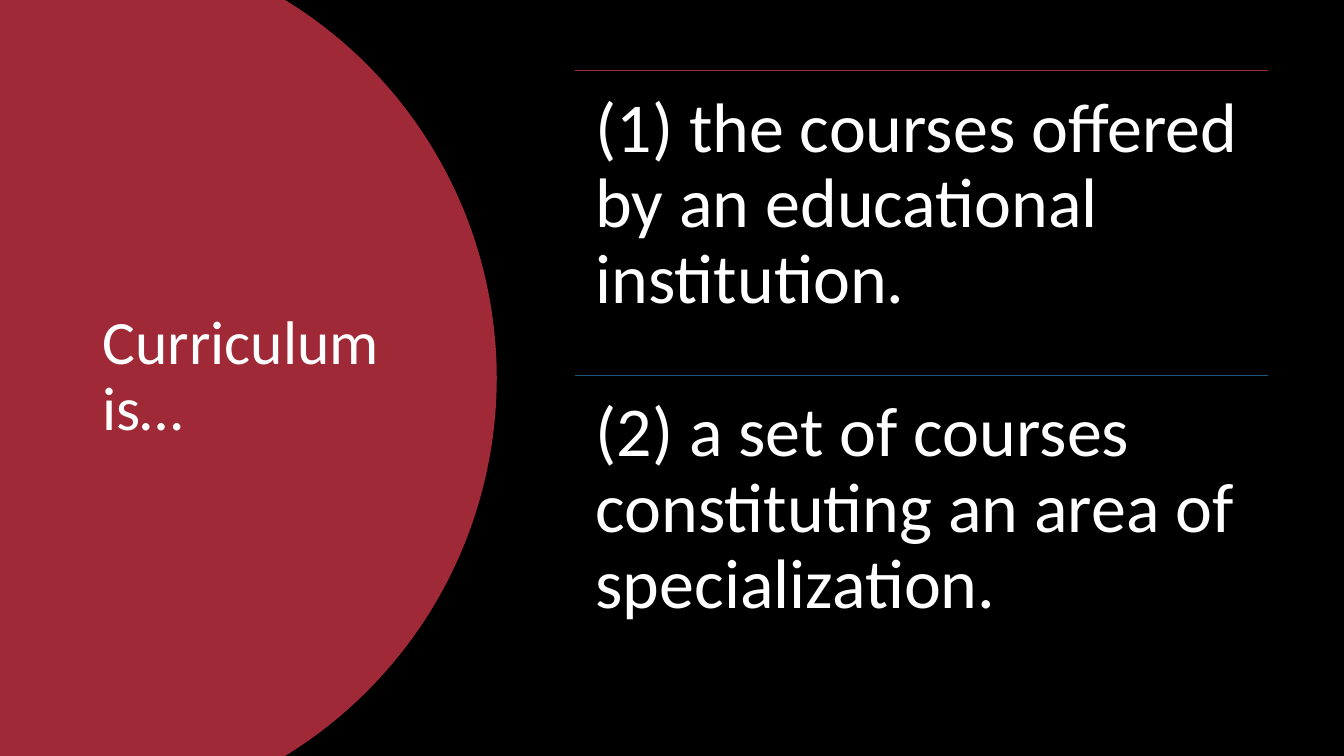
import dataclasses
import math

import pptx
import pptx.dml.color
import pptx.enum.shapes
import pptx.enum.text
import pptx.oxml.ns
import pptx.util
from lxml import etree

Cm = pptx.util.Cm
ANCHOR = pptx.enum.text.MSO_ANCHOR


@dataclasses.dataclass
class Theme:
    background: str = "000000"
    text: str = "FFFFFF"
    red: str = "9F2936"
    blue: str = "1B587C"
    font: str = "Calibri"
    title_size: float = 44
    body_size: float = 50
    rule_width: float = 1
    line_spacing: float = 0.9


def rgb(value):
    return pptx.dml.color.RGBColor.from_string(value)


def apply(target, formats):
    for name, value in formats.items():
        setattr(target, name, value)


class SlideBuilder:
    def __init__(self, deck, theme):
        self.theme = theme
        self.slide = deck.slides.add_slide(deck.slide_layouts[6])
        fill = self.slide.background.fill
        fill.solid()
        fill.fore_color.rgb = rgb(theme.background)

    def outline(self, points, color):
        start, *rest = [(Cm(x), Cm(y)) for x, y in points]
        builder = self.slide.shapes.build_freeform(*start, scale=1.0)
        builder.add_line_segments(rest, close=True)
        shape = builder.convert_to_shape()
        shape.shadow.inherit = False
        shape.fill.solid()
        shape.fill.fore_color.rgb = rgb(color)
        shape.line.fill.background()

    def rule(self, left, top, width, color):
        line = self.slide.shapes.add_connector(
            pptx.enum.shapes.MSO_CONNECTOR.STRAIGHT,
            Cm(left), Cm(top), Cm(left + width), Cm(top))
        line.line.color.rgb = rgb(color)
        line.line.width = pptx.util.Pt(self.theme.rule_width)
        properties = line._element.spPr
        etree.SubElement(properties, pptx.oxml.ns.qn("a:effectLst"))

    def text(self, words, left, top, width, height, size, anchor, inset):
        box = self.slide.shapes.add_textbox(Cm(left), Cm(top), Cm(width), Cm(height))
        frame = box.text_frame
        apply(frame, {
            "word_wrap": True,
            "vertical_anchor": anchor,
            "margin_left": Cm(inset),
            "margin_right": Cm(inset),
            "margin_top": Cm(inset),
            "margin_bottom": Cm(inset),
        })
        para = frame.paragraphs[0]
        para.line_spacing = self.theme.line_spacing
        span = para.add_run()
        span.text = words
        apply(span.font, {"name": self.theme.font, "size": pptx.util.Pt(size)})
        span.font.color.rgb = rgb(self.theme.text)


def panel_points(height, right, radius, steps=120):
    """Left panel whose right side is an arc centred on the slide height."""
    middle = height / 2
    sweep = math.asin(middle / radius)
    angles = [sweep * (2 * step / steps - 1) for step in range(steps + 1)]
    arc = [(right - radius + radius * math.cos(angle),
            middle + radius * math.sin(angle)) for angle in angles]
    return [(0, 0), *arc, (0, height)]


def main():
    width, height = 33.87, 19.05
    deck = pptx.Presentation()
    apply(deck, {"slide_width": Cm(width), "slide_height": Cm(height)})
    theme = Theme()
    page = SlideBuilder(deck, theme)

    # Curved panel and title
    page.outline(panel_points(height, right=12.52, radius=11.17), theme.red)
    page.text("Curriculum is…", 2.34, 1.78, 8.2, 15.47,
              theme.title_size, ANCHOR.MIDDLE, 0.25)

    # Definitions, each under its own rule
    left, first_top, row_width, row_height = 14.48, 1.78, 17.48, 7.68
    definitions = [
        ("(1) the courses offered by an educational institution.", theme.red),
        ("(2) a set of courses constituting an area of specialization.", theme.blue),
    ]
    for row, (words, color) in enumerate(definitions):
        top = first_top + row * row_height
        page.rule(left, top, row_width, color)
        page.text(words, left, top, row_width, row_height,
                  theme.body_size, ANCHOR.TOP, 0.53)

    deck.save("out.pptx")


if __name__ == "__main__":
    main()
